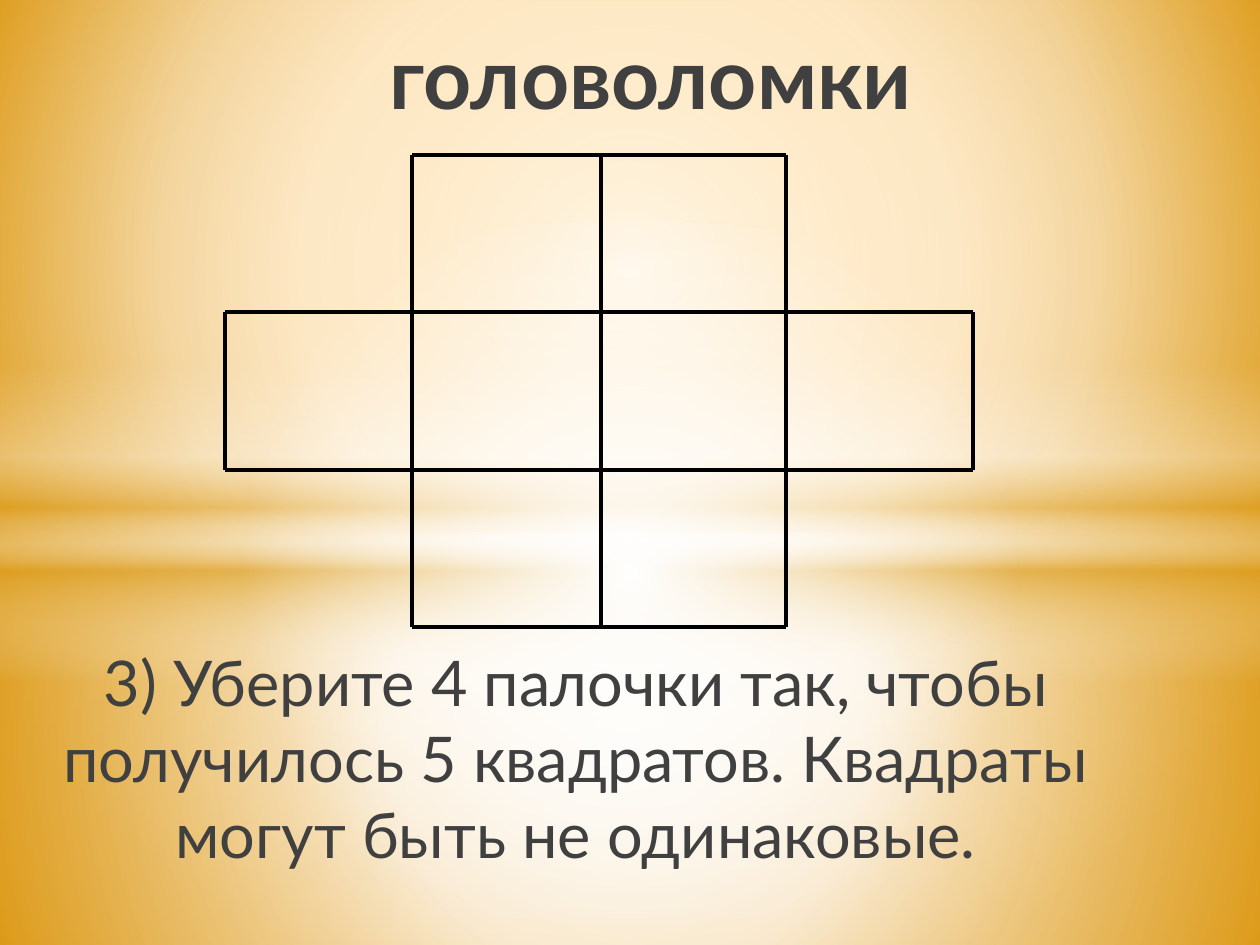
"""Build a matchstick puzzle slide on a glowing amber background."""
from dataclasses import dataclass
from typing import Optional

from lxml import etree
from pptx import Presentation
from pptx import util as u
from pptx.dml.color import RGBColor
from pptx.enum import shapes, text
from pptx.oxml import ns


@dataclass(frozen=True)
class Stop:
    position: float
    color: str
    opacity: float = 100


@dataclass(frozen=True)
class Gradient:
    stops: tuple[Stop, ...]
    focus: Optional[tuple[int, int, int, int]] = (50, 50, 50, 50)


@dataclass(frozen=True)
class Frame:
    left: float
    top: float
    width: float
    height: float

    def lengths(self) -> tuple[u.Length, ...]:
        return tuple(u.Pt(n) for n in (self.left, self.top, self.width, self.height))


@dataclass(frozen=True)
class Glow:
    frame: Frame
    gradient: Gradient
    kind: shapes.MSO_SHAPE = shapes.MSO_SHAPE.RECTANGLE


@dataclass(frozen=True)
class Stick:
    start: tuple[float, float]
    end: tuple[float, float]


@dataclass(frozen=True)
class Theme:
    font: str = "Lato"
    ink: str = "404040"
    stick: str = "000000"
    white: str = "FFFFFF"
    amber: str = "DC9E1F"
    title_size: float = 48
    body_size: float = 36
    stick_width: float = 2.25


THEME = Theme()
WHITE, AMBER = THEME.white, THEME.amber
BACKDROP = Gradient(
    (Stop(0, "FFA607"), Stop(60, "F9CD88"), Stop(100, "E08E02")), (20, 10, 20, 60)
)
GLOWS = (
    Glow(
        Frame(0, 304.5, 720, 235.5),
        Gradient((Stop(0, WHITE, 92), Stop(37, WHITE, 77), Stop(100, AMBER, 80))),
    ),
    Glow(
        Frame(0, 0, 720, 304.5),
        Gradient((Stop(0, WHITE, 90), Stop(48, WHITE, 63), Stop(100, AMBER, 80))),
    ),
    Glow(
        Frame(0, 209, 720, 180),
        Gradient(
            (
                Stop(0, WHITE, 0),
                Stop(29, WHITE, 30),
                Stop(45, AMBER, 40),
                Stop(55, WHITE, 26),
                Stop(65, AMBER, 60),
                Stop(100, WHITE, 0),
            ),
            None,
        ),
    ),
    Glow(
        Frame(0, 126, 720, 402),
        Gradient((Stop(0, WHITE), Stop(54, WHITE, 0))),
        shapes.MSO_SHAPE.OVAL,
    ),
)
COLUMNS = (128.5, 235.5, 343.5, 449, 556)
ROWS = (88.5, 178.5, 268.5, 358.5)
CELLS = ((1, 2), (0, 1, 2, 3), (1, 2))


def paint(holder, gradient: Gradient) -> None:
    """Replace the solid fill inside an XML holder with a gradient."""
    solid = holder.find(ns.qn("a:solidFill"))
    fill = etree.Element(ns.qn("a:gradFill"), rotWithShape="1")
    stops = etree.SubElement(fill, ns.qn("a:gsLst"))
    for stop in gradient.stops:
        mark = etree.SubElement(stops, ns.qn("a:gs"), pos=str(int(stop.position * 1000)))
        color = etree.SubElement(mark, ns.qn("a:srgbClr"), val=stop.color)
        if stop.opacity < 100:
            etree.SubElement(color, ns.qn("a:alpha"), val=str(int(stop.opacity * 1000)))
    if gradient.focus is None:
        etree.SubElement(fill, ns.qn("a:lin"), ang="5400000", scaled="0")
    else:
        route = etree.SubElement(fill, ns.qn("a:path"), path="circle")
        sides = {side: str(n * 1000) for side, n in zip("ltrb", gradient.focus)}
        etree.SubElement(route, ns.qn("a:fillToRect"), **sides)
    holder.replace(solid, fill)


def draw_glow(slide, glow: Glow) -> None:
    """Draw one borderless gradient shape."""
    shape = slide.shapes.add_shape(glow.kind, *glow.frame.lengths())
    shape.shadow.inherit = False
    shape.line.fill.background()
    shape.fill.solid()
    paint(shape.element.spPr, glow.gradient)


def add_text(slide, words: str, *, frame: Frame, size: float, bold: bool = False,
             left_margin: float = 7.2, bottom_margin: float = 3.6) -> None:
    """Add centred text resting on the bottom of its box."""
    box = slide.shapes.add_textbox(*frame.lengths())
    body = box.text_frame
    body.word_wrap = True
    body.vertical_anchor = text.MSO_ANCHOR.BOTTOM
    body.margin_left = u.Pt(left_margin)
    body.margin_bottom = u.Pt(bottom_margin)
    para = body.paragraphs[0]
    para.alignment = text.PP_ALIGN.CENTER
    span = para.add_run()
    span.text = words
    span.font.name = THEME.font
    span.font.size = u.Pt(size)
    span.font.bold = bold
    span.font.color.rgb = RGBColor.from_string(THEME.ink)


def puzzle_sticks() -> list[Stick]:
    """List every cell edge once, sharing the edges between neighbours."""
    edges = set()
    for row, columns in enumerate(CELLS):
        for column in columns:
            edges |= {
                ((column, row), (column + 1, row)),
                ((column, row + 1), (column + 1, row + 1)),
                ((column, row), (column, row + 1)),
                ((column + 1, row), (column + 1, row + 1)),
            }
    return [
        Stick(*((COLUMNS[column], ROWS[row]) for column, row in edge))
        for edge in sorted(edges)
    ]


def draw_stick(slide, stick: Stick) -> None:
    """Draw one matchstick as a straight line."""
    ends = (u.Pt(n) for n in (*stick.start, *stick.end))
    line = slide.shapes.add_connector(shapes.MSO_CONNECTOR.STRAIGHT, *ends)
    line.line.width = u.Pt(THEME.stick_width)
    line.line.color.rgb = RGBColor.from_string(THEME.stick)
    etree.SubElement(line.element.spPr, ns.qn("a:effectLst"))


def main() -> None:
    """Assemble and save the deck."""
    deck = Presentation()
    deck.slide_width, deck.slide_height = u.Pt(720), u.Pt(540)
    slide = deck.slides.add_slide(deck.slide_layouts[6])
    slide.background.fill.solid()
    paint(slide.element.find(".//" + ns.qn("p:bgPr")), BACKDROP)
    for glow in GLOWS:
        draw_glow(slide, glow)
    add_text(
        slide,
        "3) Уберите 4 палочки так, чтобы получилось 5 квадратов. "
        "Квадраты могут быть не одинаковые.",
        frame=Frame(20, 71.5, 618, 459), size=THEME.body_size, bottom_margin=33,
    )
    add_text(
        slide, "головоломки", frame=Frame(82, 9.5, 535, 66),
        size=THEME.title_size, bold=True, left_margin=52,
    )
    for stick in puzzle_sticks():
        draw_stick(slide, stick)
    deck.save("out.pptx")


if __name__ == "__main__":
    main()
